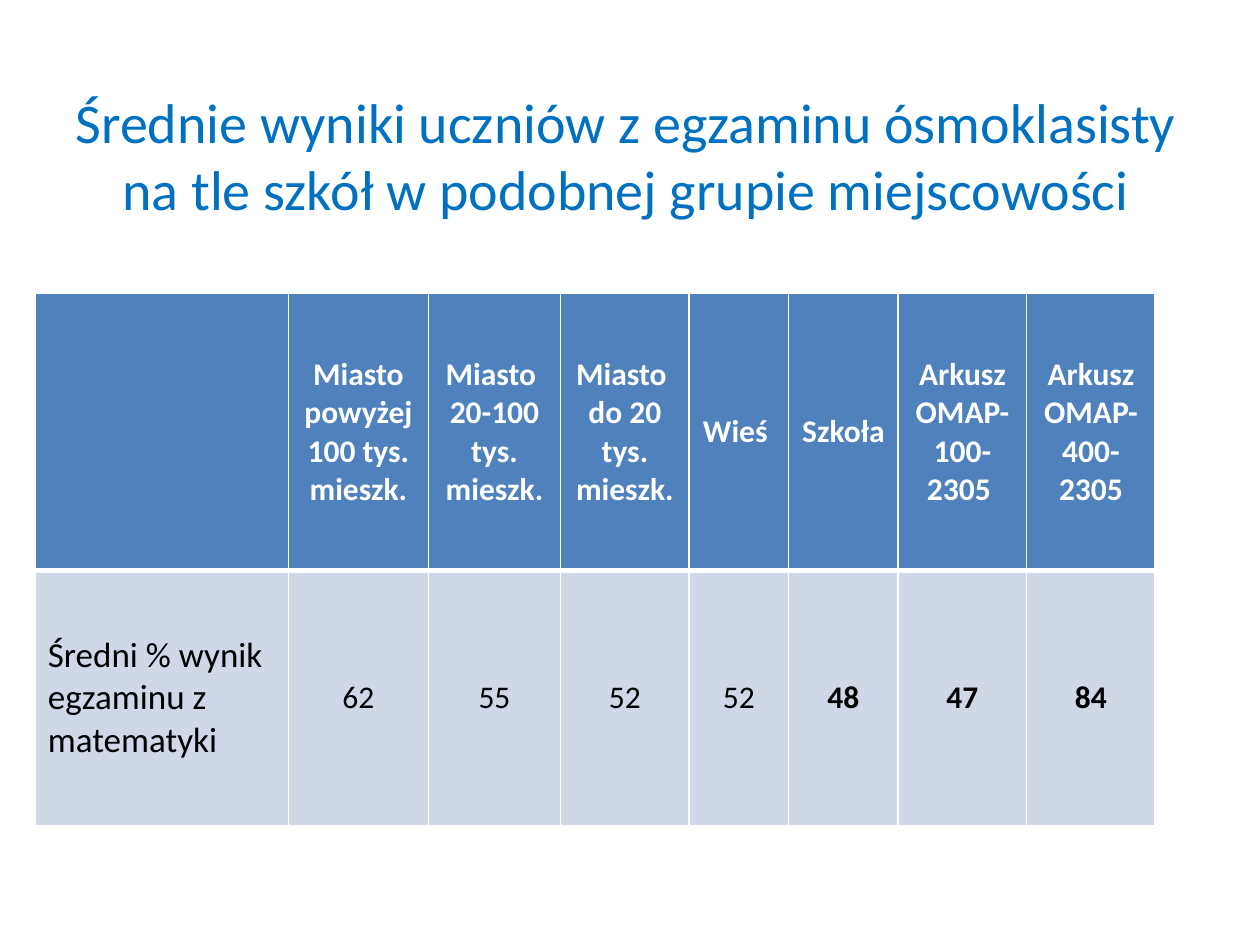
import dataclasses

import lxml.etree
import pptx
import pptx.dml.color
import pptx.enum.text
import pptx.oxml.ns
import pptx.util

Inches = pptx.util.Inches
ALIGN = pptx.enum.text.PP_ALIGN
MIDDLE = pptx.enum.text.MSO_ANCHOR.MIDDLE


@dataclasses.dataclass(frozen=True)
class Theme:
    font: str = "Calibri"
    title_color: str = "0070C0"
    header_fill: str = "4F81BD"
    header_text: str = "FFFFFF"
    body_fill: str = "D0D8E8"
    body_text: str = "000000"
    border: str = "FFFFFF"
    title_size: int = 32
    label_size: int = 20
    cell_size: int = 18
    thin_line: int = 1
    header_line: int = 3


def write_text(frame, text, *, font, size, color, bold=False, align=ALIGN.CENTER):
    """Fill a text frame; a newline starts a paragraph, a vertical tab a line."""
    frame.text = text
    frame.word_wrap = True
    for paragraph in frame.paragraphs:
        paragraph.alignment = align
        for run in paragraph.runs:
            run.font.name = font
            run.font.size = pptx.util.Pt(size)
            run.font.bold = bold
            run.font.color.rgb = pptx.dml.color.RGBColor.from_string(color)


def set_borders(cell, color, widths):
    """Draw cell borders; widths are points for left, right, top and bottom."""
    properties = cell._tc.get_or_add_tcPr()
    qualified = pptx.oxml.ns.qn
    for side, width in zip("LRTB", widths):
        line = lxml.etree.SubElement(
            properties, qualified(f"a:ln{side}"), w=str(pptx.util.Pt(width)))
        fill = lxml.etree.SubElement(line, qualified("a:solidFill"))
        lxml.etree.SubElement(fill, qualified("a:srgbClr"), val=color)


class SlideBuilder:
    def __init__(self, slide, theme):
        self.slide = slide
        self.theme = theme

    def title(self, text, left, top, width, height):
        shape = self.slide.shapes.title
        shape.left, shape.top = Inches(left), Inches(top)
        shape.width, shape.height = Inches(width), Inches(height)
        shape.text_frame.vertical_anchor = MIDDLE
        write_text(shape.text_frame, text, font=self.theme.font,
                   size=self.theme.title_size, color=self.theme.title_color)

    def cell(self, cell, text, fill, widths, **text_format):
        set_borders(cell, self.theme.border, widths)
        cell.fill.solid()
        cell.fill.fore_color.rgb = pptx.dml.color.RGBColor.from_string(fill)
        cell.vertical_anchor = MIDDLE
        write_text(cell.text_frame, text, font=self.theme.font, **text_format)

    def results_table(self, left, top, column_widths, row_heights, headers,
                      label, results, bold_results):
        theme = self.theme
        table = self.slide.shapes.add_table(
            len(row_heights), len(column_widths), Inches(left), Inches(top),
            Inches(sum(column_widths)), Inches(sum(row_heights))).table
        for column, width in zip(table.columns, column_widths):
            column.width = Inches(width)
        for row, height in zip(table.rows, row_heights):
            row.height = Inches(height)

        thin, thick = theme.thin_line, theme.header_line
        body_borders = (thin, thin, thick, thin)
        for index, header in enumerate(headers):
            self.cell(table.cell(0, index), header, theme.header_fill,
                      (thin, thin, thin, thick), size=theme.cell_size,
                      color=theme.header_text, bold=True)
        self.cell(table.cell(1, 0), label, theme.body_fill, body_borders,
                  size=theme.label_size, color=theme.body_text, align=ALIGN.LEFT)
        for index, result in enumerate(results, start=1):
            self.cell(table.cell(1, index), str(result), theme.body_fill,
                      body_borders, size=theme.cell_size, color=theme.body_text,
                      bold=headers[index] in bold_results)


def main():
    presentation = pptx.Presentation()
    presentation.slide_width, presentation.slide_height = Inches(10), Inches(7.5)
    title_only = presentation.slide_layouts.get_by_name("Title Only")
    builder = SlideBuilder(presentation.slides.add_slide(title_only), Theme())

    builder.title("Średnie wyniki uczniów z egzaminu ósmoklasisty "
                  "na tle szkół w podobnej grupie miejscowości",
                  0.47, 0.6, 9, 1.25)
    places = ["Miasto powyżej 100 tys. mieszk.", "Miasto \v20-100 tys. mieszk.",
              "Miasto \vdo 20 tys. mieszk.", "Wieś "]
    school = ["Szkoła ", "Arkusz\nOMAP-100-2305 ", "Arkusz\nOMAP-400-2305"]
    builder.results_table(
        0.28, 2.33,
        column_widths=[2.01, 1.11, 1.05, 1.02, 0.79, 0.87, 1.02, 1.02],
        row_heights=[2.2, 2.02],
        headers=["", *places, *school],
        label="Średni % wynik egzaminu z matematyki",
        results=[62, 55, 52, 52, 48, 47, 84],
        bold_results=school)
    presentation.save("out.pptx")


if __name__ == "__main__":
    main()
